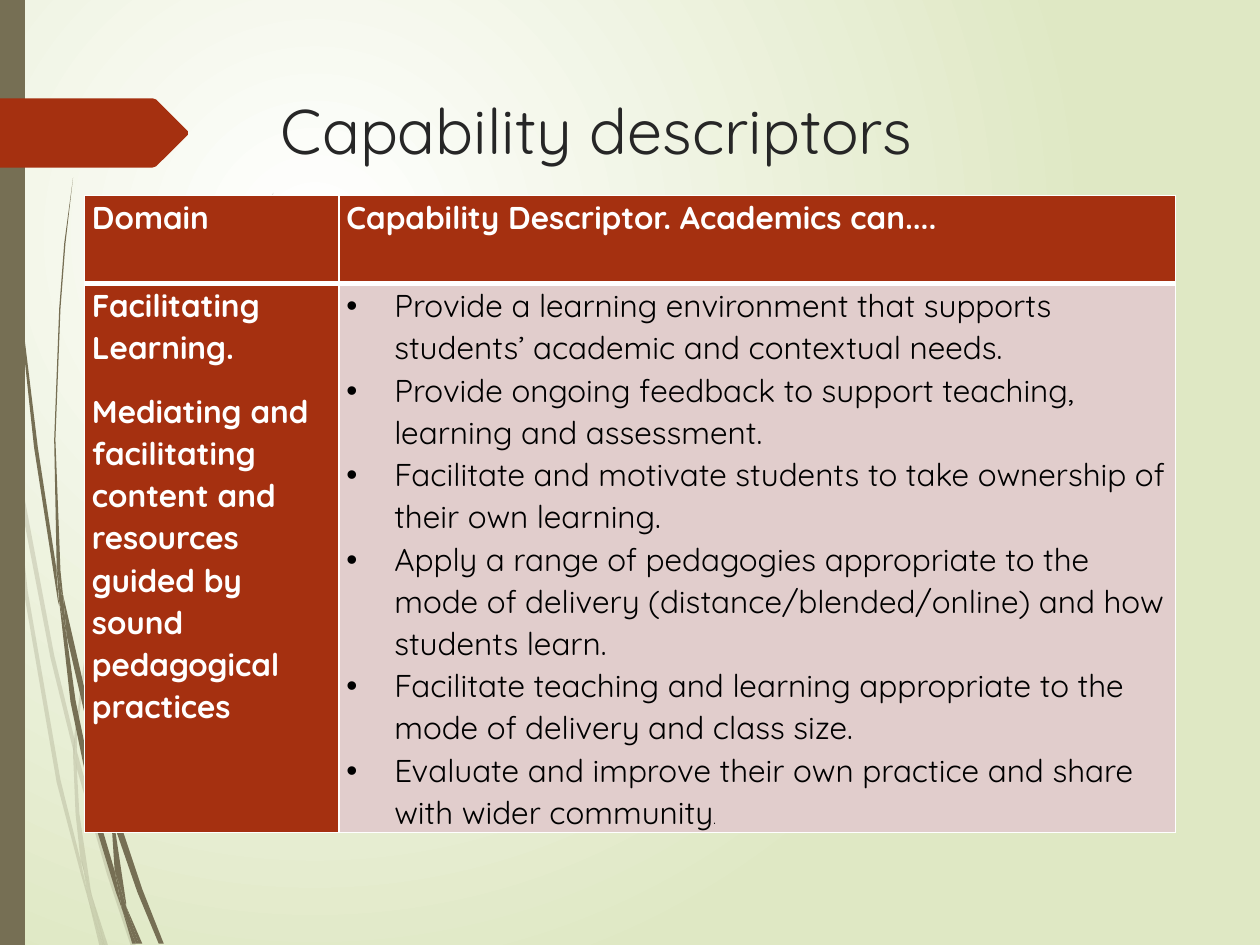
from lxml import etree
from pptx import Presentation
from pptx import util as u
from pptx.dml.color import RGBColor
from pptx.enum import text
from pptx.oxml.ns import qn

FONT = "Quicksand"
WHITE = RGBColor(0xFF, 0xFF, 0xFF)
BLACK = RGBColor(0, 0, 0)
PALE_GREEN = RGBColor(0xDF, 0xE8, 0xC4)
OLIVE = RGBColor(0x76, 0x6F, 0x54)
RUST = RGBColor(0xA5, 0x30, 0x10)
PINK = RGBColor(0xE1, 0xCD, 0xCC)
TITLE_GREY = RGBColor(0x26, 0x26, 0x26)

PALE_GRASS = [
    [(.08, 3.5), (.06, 3.22), (0, 2.82), (0, 2.99), (.07, 3.44)],
    [(.4, 5.22), (.59, 5.99), (.59, 5.86), (.43, 5.2), (.1, 3.45), (.12, 3.76)],
    [(.64, 6.07), (.61, 5.96), (.61, 6.1), (.85, 6.94), (1.04, 7.51), (1.08, 7.51),
     (.88, 6.92)],
    [(.83, 7.51), (.86, 7.51), (.73, 7.11)],
    [(.64, 6.83), (.48, 6.19), (.22, 4.69), (.12, 3.76), (.08, 3.5), (.19, 4.7),
     (.45, 6.21), (.64, 6.93), (.7, 7.14), (.69, 7.07)],
    [(.58, 5.99), (.6, 6.46), (.64, 6.83), (.67, 6.92), (.73, 7.11), (.72, 7.06),
     (.63, 6.46), (.61, 6.1), (.61, 6.08)],
    [(.61, 5.84), (.76, 4.62), (1.11, 3.49), (1.59, 2.45), (1.87, 1.98), (2.01, 1.75),
     (2.17, 1.54), (2.17, 1.53), (2.01, 1.75), (1.86, 1.97), (1.58, 2.44), (1.1, 3.48),
     (.75, 4.61), (.59, 5.84), (.59, 5.86), (.61, 5.96)],
    [(.7, 7.14), (.79, 7.51), (.82, 7.51)],
    [(.61, 6.08), (.61, 6.1), (.61, 5.96), (.59, 5.86), (.58, 5.99)],
    [(.67, 6.92), (.65, 6.83), (.69, 7.07), (.7, 7.14), (.82, 7.51), (.83, 7.51),
     (.73, 7.11)],
]
DARK_GRASS = [
    [(.05, 1.1), (.14, 2.33), (.27, 3.55), (.46, 4.77), (.47, 4.81), (.45, 4.57),
     (.45, 4.53), (.3, 3.55), (.15, 2.32), (.06, 1.09), (.04, .48), (.03, 0), (.02, 0),
     (.03, .48)],
    [(.73, 5.92), (.88, 6.45), (.88, 6.33), (.88, 6.31), (.77, 5.9), (.5, 4.72),
     (.53, 5.05)],
    [(.94, 6.49), (.91, 6.41), (.91, 6.56), (1.09, 7.08), (1.26, 7.49), (1.3, 7.49),
     (1.13, 7.06)],
    [(.91, 6.91), (.81, 6.57), (.6, 5.56), (.53, 5.05), (.47, 4.77), (.56, 5.57),
     (.77, 6.59), (.92, 7.08), (.97, 7.22), (.96, 7.17)],
    [(.5, 4.72), (.48, 4.53), (.44, 3.49), (.48, 2.45), (.52, 1.93), (.58, 1.41),
     (.51, 1.93), (.47, 2.45), (.43, 3.49), (.45, 4.49), (.49, 4.72)],
    [(1.1, 7.49), (1.13, 7.49), (1, 7.19)],
    [(.47, 4.77), (.53, 5.05), (.5, 4.72), (.49, 4.72), (.45, 4.49), (.45, 4.53)],
    [(.91, 6.33), (1.03, 5.52), (1.31, 4.76), (1.69, 4.06), (1.91, 3.74), (2.03, 3.59),
     (2.16, 3.44), (2.15, 3.44), (2.03, 3.58), (1.91, 3.73), (1.68, 4.05), (1.29, 4.74),
     (1.01, 5.51), (.88, 6.31), (.91, 6.41)],
    [(.97, 7.22), (1.05, 7.49), (1.08, 7.49)],
    [(.88, 6.45), (.91, 6.91), (.96, 7.06), (1, 7.19), (1, 7.16), (.91, 6.56),
     (.9, 6.51)],
    [(.88, 6.45), (.9, 6.51), (.91, 6.56), (.91, 6.41), (.88, 6.31), (.88, 6.33)],
    [(.96, 7.06), (.91, 6.91), (.96, 7.17), (.97, 7.22), (1.08, 7.49), (1.1, 7.49),
     (1, 7.19)],
]
BAR = [(0, 0), (.2, 0), (.2, 7.5), (0, 7.5)]
ARROW = [(0, 0), (1.21, 0), (1.24, .01), (1.49, .26), (1.49, .29), (1.24, .54),
         (1.21, .55), (0, .55)]

HEADERS = [["Domain"], ["Capability Descriptor. Academics can....", " "]]
DOMAIN = ["Facilitating Learning.",
          "Mediating and facilitating content and resources guided by sound "
          "pedagogical practices"]
DESCRIPTORS = [
    ["Provide a learning environment that supports students’ academic and contextual needs."],
    ["Provide ongoing feedback to support teaching, learning and assessment."],
    ["Facilitate and motivate students to take ownership of their own learning."],
    ["Apply a range of pedagogies appropriate to the mode of delivery "
     "(distance/blended/online) and how students learn."],
    ["Facilitate teaching and learning appropriate to the mode of delivery and class size."],
    ["Evaluate and improve their own practice and share with wider community", "."],
]


def set_background(s):
    """Fill the background with a radial gradient centred up and left."""
    fill = s.background.fill
    fill.gradient()
    for stop, colour in zip(fill.gradient_stops, (WHITE, PALE_GREEN)):
        stop.color.rgb = colour
    grad = s.element.find(".//" + qn("a:gradFill"))
    grad.remove(grad.find(qn("a:lin")))
    path = etree.SubElement(grad, qn("a:path"), path="circle")
    etree.SubElement(path, qn("a:fillToRect"), l="50000", t="50000", r="100000", b="100000")


def add_outline(s, points, left, top, colour, alpha=None):
    """Draw a closed, filled outline offset by left and top."""
    pts = [(left + u.Inches(x), top + u.Inches(y)) for x, y in points]
    fb = s.shapes.build_freeform(*pts[0])
    fb.add_line_segments(pts[1:], close=True)
    sp = fb.convert_to_shape()
    sp.shadow.inherit = False
    sp.fill.solid()
    sp.fill.fore_color.rgb = colour
    sp.line.fill.background()
    if alpha:
        clr = sp.element.spPr.find(".//" + qn("a:srgbClr"))
        etree.SubElement(clr, qn("a:alpha"), val=str(alpha * 1000))


def add_side_decoration(s, left, top):
    """Draw the grass, side bar and arrow along the left edge."""
    for points in PALE_GRASS:
        add_outline(s, points, left, top, OLIVE, 20)
    for points in DARK_GRASS:
        add_outline(s, points, left, top, OLIVE)
    add_outline(s, BAR, left, top, OLIVE)
    add_outline(s, ARROW, left, top + u.Inches(.78), RUST)


def style_run(r, size, colour, bold=False):
    """Set the font of one run."""
    r.font.name, r.font.size, r.font.bold = FONT, u.Pt(size), bold
    r.font.color.rgb = colour


def add_title(s, left, top, width, height):
    """Place and format the title placeholder above the decoration."""
    sp = s.shapes.title
    s.shapes.element.append(sp.element)
    sp.left, sp.top, sp.width, sp.height = left, top, width, height
    tf = sp.text_frame
    tf.text = "Capability descriptors"
    tf.vertical_anchor = text.MSO_ANCHOR.TOP
    p = tf.paragraphs[0]
    p.alignment = text.PP_ALIGN.LEFT
    style_run(p.runs[0], 36, TITLE_GREY)


def format_cell(cell, colour, top, bottom):
    """Set the margins, white borders and fill of a cell."""
    cell.margin_left = cell.margin_right = u.Inches(.06)
    cell.margin_top = cell.margin_bottom = 0
    tcPr = cell._tc.get_or_add_tcPr()
    for side, width in zip("LRTB", (1, 1, top, bottom)):
        ln = etree.SubElement(tcPr, qn("a:ln" + side), w=str(u.Pt(width)))
        fill = etree.SubElement(ln, qn("a:solidFill"))
        etree.SubElement(fill, qn("a:srgbClr"), val=str(WHITE))
    cell.fill.solid()
    cell.fill.fore_color.rgb = colour


def fill_cell(cell, paragraphs, colour, bold, bullets=False):
    """Write paragraphs, each a main run and an optional small run."""
    tf = cell.text_frame
    for i, parts in enumerate(paragraphs):
        p = tf.add_paragraph() if i else tf.paragraphs[0]
        if bullets:
            pPr = p._p.get_or_add_pPr()
            pPr.set("marL", str(u.Inches(.38)))
            pPr.set("indent", str(-u.Inches(.38)))
            etree.SubElement(pPr, qn("a:buFont"), typeface="Arial")
            etree.SubElement(pPr, qn("a:buChar"), char="•")
        p.line_spacing = 1.07
        p.space_before = u.Pt(6 if i and not bullets else 0)
        p.space_after = u.Pt(0 if bullets and i < len(paragraphs) - 1 else 6)
        for part, size in zip(parts, (18, 8)):
            r = p.add_run()
            r.text = part
            style_run(r, size, colour, bold)


def add_descriptor_table(s, left, top, width, height):
    """Add the table of domain and capability descriptors."""
    table = s.shapes.add_table(2, 2, left, top, width, height).table
    table.columns[0].width = u.Inches(2.02)
    table.columns[1].width = width - u.Inches(2.02)
    table.rows[0].height = u.Inches(.7)
    table.rows[1].height = height - u.Inches(.7)
    for col, header in enumerate(HEADERS):
        format_cell(table.cell(0, col), RUST, 1, 3)
        fill_cell(table.cell(0, col), [header], WHITE, True)
        format_cell(table.cell(1, col), (RUST, PINK)[col], 3, 1)
    fill_cell(table.cell(1, 0), [[line] for line in DOMAIN], WHITE, True)
    fill_cell(table.cell(1, 1), DESCRIPTORS, BLACK, False, bullets=True)


def main():
    """Build and save the slide."""
    prs = Presentation()
    prs.slide_width, prs.slide_height = u.Inches(10), u.Inches(7.5)
    s = prs.slides.add_slide(prs.slide_layouts[5])
    set_background(s)
    add_side_decoration(s, 0, 0)
    add_title(s, u.Inches(2.13), u.Inches(.68), u.Inches(7.21), u.Inches(1.4))
    add_descriptor_table(s, u.Inches(.67), u.Inches(1.55), u.Inches(8.66), u.Inches(4.87))
    prs.save("out.pptx")


if __name__ == "__main__":
    main()
